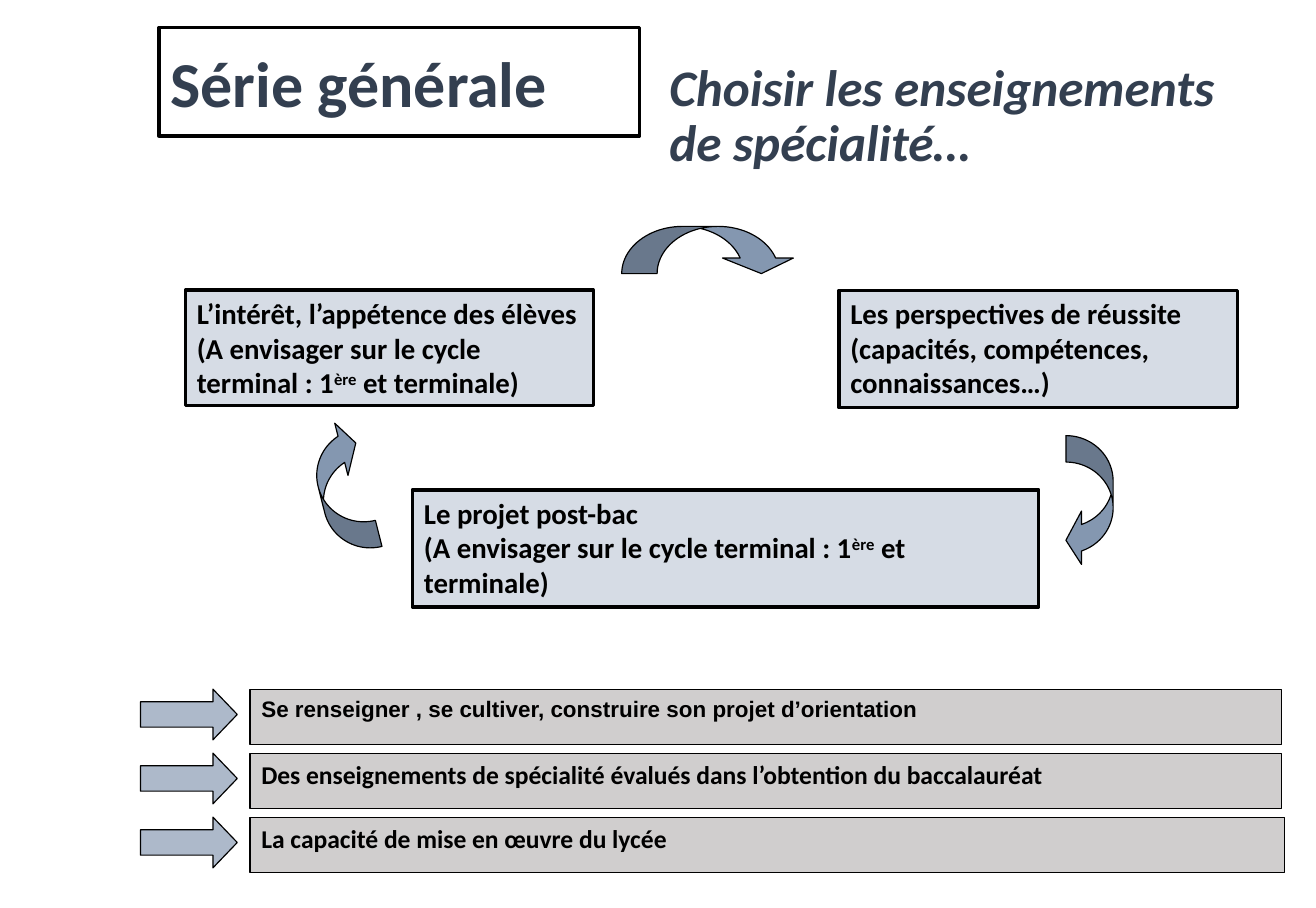
from pptx import Presentation
from pptx.dml.color import RGBColor
from pptx.enum.shapes import MSO_SHAPE
from pptx.enum.text import MSO_ANCHOR, PP_ALIGN
from pptx.util import Pt

RECT, RIGHT, CURVED = (MSO_SHAPE.RECTANGLE, MSO_SHAPE.RIGHT_ARROW,
                       MSO_SHAPE.CURVED_LEFT_ARROW)
TOP, MIDDLE, LEFT = MSO_ANCHOR.TOP, MSO_ANCHOR.MIDDLE, PP_ALIGN.LEFT
BLACK, NAVY, PALE, STEEL, SKY, GREY = (
    "000000", "333F50", "D6DCE5", "8497B0", "ADB9CA", "D0CECE")

HEADING = "Série générale"
TITLE = "Choisir les enseignements de spécialité…"
CYCLE_NOTE = "(A envisager sur le cycle terminal : 1^ère^ et terminale)"

# (left, top, width, height), paragraphs; ^ surrounds superscript
CRITERIA = [
    ((115.9, 181.4, 254.9, 72), ["L’intérêt, l’appétence des élèves", CYCLE_NOTE]),
    ((524.2, 181.4, 249.1, 73.4),
     ["Les perspectives de réussite (capacités, compétences, connaissances…)"]),
    ((257.8, 306, 391, 73.4), ["Le projet post-bac", CYCLE_NOTE]),
]
# (left, top, width, height), rotation, adjustments
CYCLE_ARROWS = [
    ((428.4, 101.5, 29.5, 109.4), 270, (0.75, 1.5, 0.33)),
    ((666, 272.2, 29.5, 82.1), 0, (0.56, 1.13, 0.33)),
    ((199.4, 262.8, 29.5, 83.5), 165.8, (0.57, 1.14, 0.33)),
]
# text, font, size, bar width
ADVICE = [
    ("Se renseigner , se cultiver, construire son projet d’orientation",
     "Arial", 14, 644.4),
    ("Des enseignements de spécialité évalués dans l’obtention du baccalauréat",
     "Calibri", 16, 644.4),
    ("La capacité de mise en œuvre du lycée", "Calibri", 16, 646.6),
]
ADVICE_TOP, ADVICE_PITCH = 430.6, 40


def rgb(value):
    return RGBColor.from_string(value)


def add_shape(kind, box, fill, line_width, adjustments=(), rotation=0):
    sp = s.shapes.add_shape(kind, *map(Pt, box))
    sp.shadow.inherit = False
    sp.rotation = rotation
    if fill:
        sp.fill.solid()
        sp.fill.fore_color.rgb = rgb(fill)
    else:
        sp.fill.background()
    sp.line.color.rgb = rgb(BLACK)
    sp.line.width = Pt(line_width)
    for i, value in enumerate(adjustments):
        sp.adjustments[i] = value
    return sp


def write(sp, paragraphs, size, color=BLACK, anchor=TOP, spacing=None, **style):
    """Fill sp with bold text; text between ^ marks is superscript."""
    tf = sp.text_frame
    tf.word_wrap = True
    tf.vertical_anchor = anchor
    font = {"name": "Calibri", "size": Pt(size), "bold": True, **style}
    for i, text in enumerate(paragraphs):
        p = tf.add_paragraph() if i else tf.paragraphs[0]
        p.alignment = LEFT
        p.line_spacing = spacing
        for j, part in enumerate(text.split("^")):
            r = p.add_run()
            r.text = part
            for name, value in font.items():
                setattr(r.font, name, value)
            r.font.color.rgb = rgb(color)
            if j % 2:
                r._r.get_or_add_rPr().set("baseline", "30000")


prs = Presentation()
prs.slide_width, prs.slide_height = Pt(822.24), Pt(567.36)
s = prs.slides.add_slide(prs.slide_layouts[6])

title = s.shapes.add_textbox(*map(Pt, (411.1, 39.6, 388.1, 67.7)))
write(title, [TITLE], 32, NAVY, MIDDLE, 0.9, italic=True)
heading = add_shape(RECT, (99.4, 17.3, 300.2, 67.7), None, 2.25)
write(heading, [HEADING], 40, NAVY, MIDDLE)

for box, paragraphs in CRITERIA:
    write(add_shape(RECT, box, PALE, 2.25), paragraphs, 18)
for box, rotation, adjustments in CYCLE_ARROWS:
    add_shape(CURVED, box, STEEL, 0.75, adjustments, rotation)

for i, (text, face, size, width) in enumerate(ADVICE):
    top = ADVICE_TOP + i * ADVICE_PITCH
    add_shape(RIGHT, (87.8, top, 60.5, 31.7), SKY, 0.75, (0.5, 0.48))
    bar = add_shape(RECT, (156.2, top, width, 34.6), GREY, 0.75)
    write(bar, [text], size, name=face)

prs.save("out.pptx")
